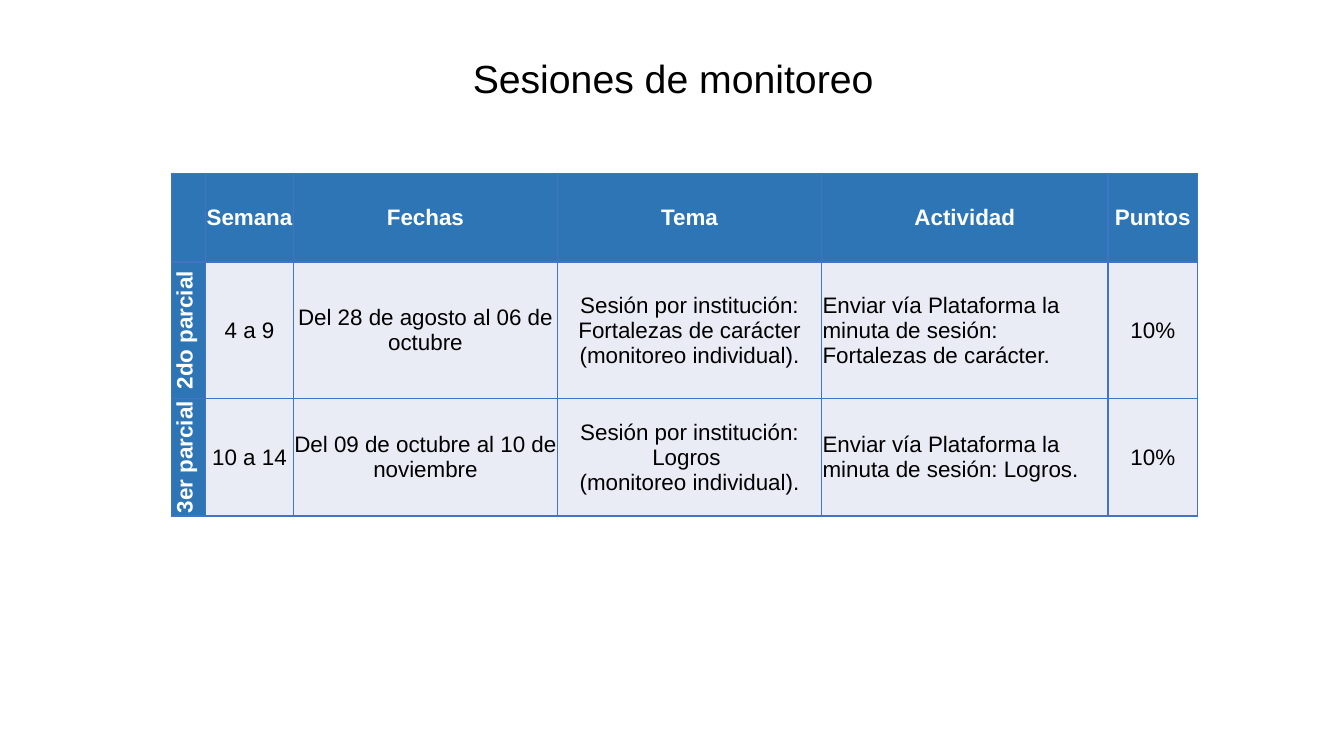
from lxml import etree
from pptx import Presentation
from pptx.dml.color import RGBColor
from pptx.enum import text
from pptx.oxml import ns
from pptx.util import Inches, Pt

COLORS = {"header": "2E75B6", "body": "E9EBF5", "border": "4472C4",
          "white": "FFFFFF", "black": "000000"}
WIDTHS = [0.34, 0.87, 2.62, 2.62, 2.84, 0.89]
HEIGHTS = [0.88, 1.35, 1.17]
ACTIVITY = 4
ROWS = [
    ["", "Semana", "Fechas", "Tema", "Actividad", "Puntos"],
    ["2do parcial", "4 a 9", "Del 28 de agosto al 06 de octubre",
     "Sesión por institución: Fortalezas de carácter (monitoreo individual).",
     "Enviar vía Plataforma la minuta de sesión: Fortalezas de carácter.", "10%"],
    ["3er parcial", "10 a 14", "Del 09 de octubre al 10 de noviembre",
     "Sesión por institución: Logros \n(monitoreo individual).",
     "Enviar vía Plataforma la minuta de sesión: Logros.", "10%"],
]


def add_text(p, content, size, color, bold=False):
    for i, line in enumerate(content.split("\n")):
        if i:
            p.add_line_break()
        r = p.add_run()
        r.text = line
        r.font.name = "Arial"
        r.font.size = Pt(size)
        r.font.bold = bold
        r.font.color.rgb = RGBColor.from_string(COLORS[color])


def add_borders(cell):
    tc_pr = cell._tc.get_or_add_tcPr()
    for side in ("lnL", "lnR", "lnT", "lnB"):
        ln = etree.SubElement(tc_pr, ns.qn(f"a:{side}"), w=str(Pt(1)))
        fill = etree.SubElement(ln, ns.qn("a:solidFill"))
        etree.SubElement(fill, ns.qn("a:srgbClr"), val=COLORS["border"])


prs = Presentation()
prs.slide_width, prs.slide_height = Inches(13.33), Inches(7.5)
s = prs.slides.add_slide(prs.slide_layouts[5])

title = s.shapes.title
title.left, title.top = Inches(0.19), Inches(0.54)
title.width, title.height = Inches(12.97), Inches(1.45)
tf = title.text_frame
tf.auto_size = text.MSO_AUTO_SIZE.NONE
tf.vertical_anchor = text.MSO_ANCHOR.TOP
p = tf.paragraphs[0]
p.alignment = text.PP_ALIGN.CENTER
p.line_spacing = 0.9
add_text(p, "Sesiones de monitoreo", 28, "black")

table = s.shapes.add_table(len(ROWS), len(WIDTHS), Inches(1.7), Inches(1.72),
                           Inches(sum(WIDTHS)), Inches(sum(HEIGHTS))).table
for column, width in zip(table.columns, WIDTHS):
    column.width = Inches(width)
for row, height in zip(table.rows, HEIGHTS):
    row.height = Inches(height)

for i, values in enumerate(ROWS):
    for j, value in enumerate(values):
        cell = table.cell(i, j)
        heading = i == 0 or j == 0
        add_borders(cell)
        cell.fill.solid()
        cell.fill.fore_color.rgb = RGBColor.from_string(
            COLORS["header" if heading else "body"])
        cell.margin_left = cell.margin_right = cell.margin_top = Inches(0.01)
        cell.margin_bottom = 0
        cell.vertical_anchor = text.MSO_ANCHOR.MIDDLE
        if i and j == 0:
            cell._tc.get_or_add_tcPr().set("vert", "vert270")
        p = cell.text_frame.paragraphs[0]
        left = i and j == ACTIVITY
        p.alignment = text.PP_ALIGN.LEFT if left else text.PP_ALIGN.CENTER
        if value:
            add_text(p, value, 16, "white" if heading else "black", heading)

prs.save("out.pptx")
